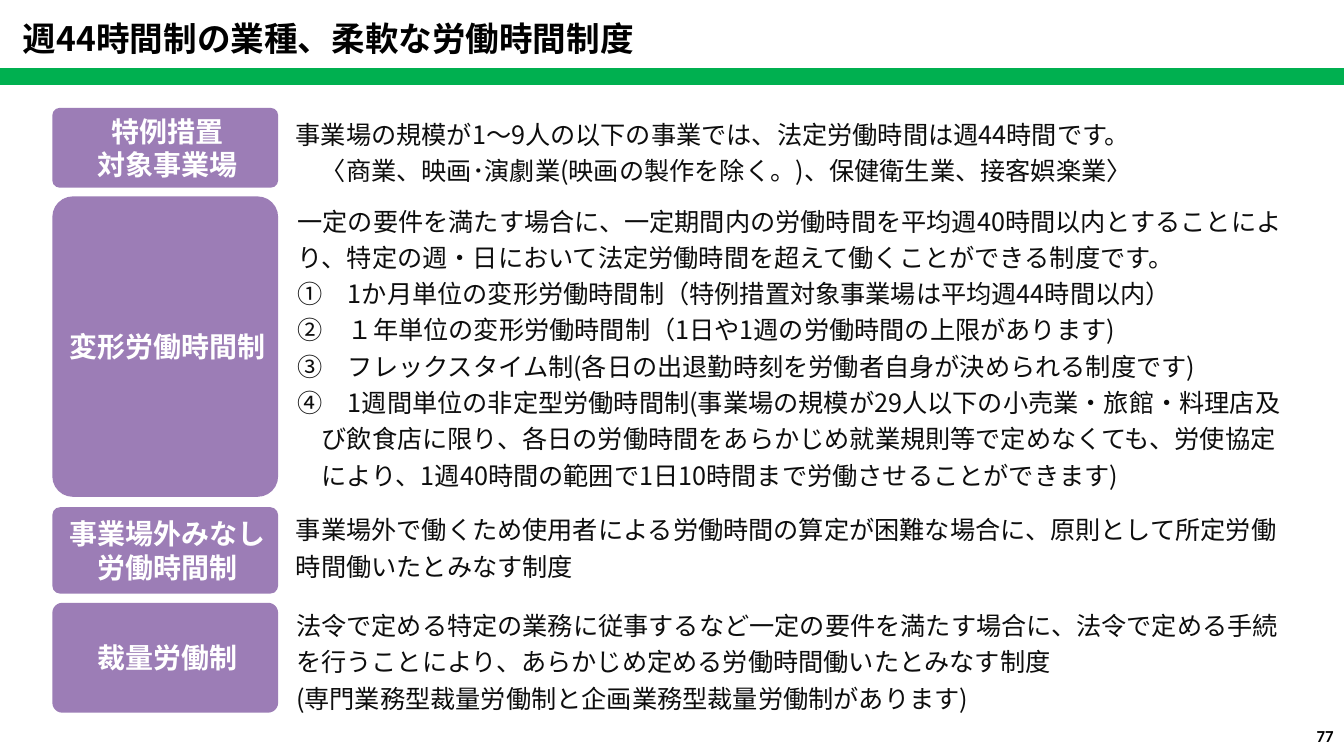
from lxml.etree import SubElement
from pptx import Presentation
from pptx.dml.color import RGBColor
from pptx.enum.shapes import MSO_SHAPE
from pptx.enum.text import MSO_ANCHOR, PP_ALIGN
from pptx.oxml.ns import qn
from pptx.util import Cm, Pt

PURPLE = RGBColor(0x9C, 0x7D, 0xB6)
GREEN = RGBColor(0x00, 0xB0, 0x50)
WHITE = RGBColor(0xFF, 0xFF, 0xFF)
BLACK = RGBColor(0x00, 0x00, 0x00)
BODY = RGBColor(0x0D, 0x0D, 0x0D)
JAPANESE = "Noto Sans CJK JP"

LABEL_LEFT, LABEL_WIDTH = 1.32, 5.69
DETAIL_LEFT, DETAIL_WIDTH = 7.24, 25.3
HANGING = 0.61
NUMERALS = "①②③④"

# Label lines, label top and height, detail paragraphs, detail top, height and anchor
SYSTEMS = [
    (["特例措置", "対象事業場"], 2.72, 2.01,
     ["事業場の規模が1～9人の以下の事業では、法定労働時間は週44時間です。",
      "　〈商業、映画･演劇業(映画の製作を除く。)、保健衛生業、接客娯楽業〉"],
     2.92, 1.7, MSO_ANCHOR.MIDDLE),
    (["変形労働時間制"], 4.95, 7.57,
     ["一定の要件を満たす場合に、一定期間内の労働時間を平均週40時間以内とすることにより、"
      "特定の週・日において法定労働時間を超えて働くことができる制度です。",
      "①　1か月単位の変形労働時間制（特例措置対象事業場は平均週44時間以内）",
      "②　１年単位の変形労働時間制（1日や1週の労働時間の上限があります)",
      "③　フレックスタイム制(各日の出退勤時刻を労働者自身が決められる制度です)",
      "④　1週間単位の非定型労働時間制(事業場の規模が29人以下の小売業・旅館・料理店及び飲食店に限り、"
      "各日の労働時間をあらかじめ就業規則等で定めなくても、労使協定により、"
      "1週40時間の範囲で1日10時間まで労働させることができます)"],
     4.88, 7.62, MSO_ANCHOR.TOP),
    (["事業場外みなし労働時間制"], 12.78, 2.18,
     ["事業場外で働くため使用者による労働時間の算定が困難な場合に、"
      "原則として所定労働時間働いたとみなす制度"],
     12.7, 2.21, MSO_ANCHOR.TOP),
    (["裁量労働制"], 15.19, 2.77,
     ["法令で定める特定の業務に従事するなど一定の要件を満たす場合に、"
      "法令で定める手続を行うことにより、あらかじめ定める労働時間働いたとみなす制度",
      "(専門業務型裁量労働制と企画業務型裁量労働制があります)"],
     15.11, 2.79, MSO_ANCHOR.TOP),
]


def write(frame, lines, size, color, font=JAPANESE, bold=False, align=PP_ALIGN.LEFT,
          anchor=MSO_ANCHOR.TOP, spacing=None, right_inset=None):
    """Fill a text frame, one paragraph a line; numbered lines get a hanging indent."""
    frame.word_wrap = True
    frame.vertical_anchor = anchor
    if right_inset is not None:
        frame.margin_left, frame.margin_right = Cm(0.2), Cm(right_inset)
        frame.margin_top = frame.margin_bottom = Cm(0.1)
    for number, line in enumerate(lines):
        paragraph = frame.add_paragraph() if number else frame.paragraphs[0]
        paragraph.alignment = align
        paragraph.line_spacing = spacing
        if line[0] in NUMERALS:
            properties = paragraph._p.get_or_add_pPr()
            properties.set("marL", str(Cm(HANGING)))
            properties.set("indent", str(-Cm(HANGING)))
        run = paragraph.add_run()
        run.text = line
        run.font.size = Pt(size)
        run.font.bold = bold
        run.font.name = font
        run.font.color.rgb = color
        SubElement(run._r.get_or_add_rPr(), qn("a:ea"), typeface=font)


def add_block(slide, kind, left, top, width, height, fill, rounding=None):
    block = slide.shapes.add_shape(kind, Cm(left), Cm(top), Cm(width), Cm(height))
    block.shadow.inherit = False
    block.fill.solid()
    block.fill.fore_color.rgb = fill
    block.line.fill.background()
    if rounding is not None:
        block.adjustments[0] = rounding
    return block


def add_caption(slide, left, top, width, height, text, **text_format):
    caption = slide.shapes.add_textbox(Cm(left), Cm(top), Cm(width), Cm(height))
    write(caption.text_frame, [text], color=BLACK, bold=True, **text_format)


def add_system(slide, label_lines, label_top, label_height,
               details, detail_top, detail_height, detail_anchor):
    """Add one working-time system: its explanation and its purple label."""
    detail = add_block(slide, MSO_SHAPE.ROUNDED_RECTANGLE, DETAIL_LEFT, detail_top,
                       DETAIL_WIDTH, detail_height, WHITE, rounding=0.026)
    write(detail.text_frame, details, 18, BODY, anchor=detail_anchor,
          spacing=1.2, right_inset=0)
    label = add_block(slide, MSO_SHAPE.ROUNDED_RECTANGLE, LABEL_LEFT, label_top,
                      LABEL_WIDTH, label_height, PURPLE, rounding=0.091)
    write(label.text_frame, label_lines, 20, WHITE, bold=True, align=PP_ALIGN.CENTER,
          anchor=MSO_ANCHOR.MIDDLE, right_inset=0.1)


def main():
    deck = Presentation()
    deck.slide_width, deck.slide_height = Cm(33.87), Cm(19.05)
    slide = deck.slides.add_slide(deck.slide_layouts[6])

    title_rule = add_block(slide, MSO_SHAPE.RECTANGLE, 0, 1.75, 33.87, 0.36, GREEN)
    title_rule.line.color.rgb = GREEN
    title_rule.line.width = Pt(2)
    add_caption(slide, 0.33, 0.33, 30, 1.27, "週44時間制の業種、柔軟な労働時間制度", size=24)

    for system in SYSTEMS:
        add_system(slide, *system)

    add_caption(slide, 25.96, 18.03, 7.9, 1.02, "77", size=12, font="Calibri",
                align=PP_ALIGN.RIGHT, anchor=MSO_ANCHOR.MIDDLE)
    deck.save("out.pptx")


if __name__ == "__main__":
    main()
